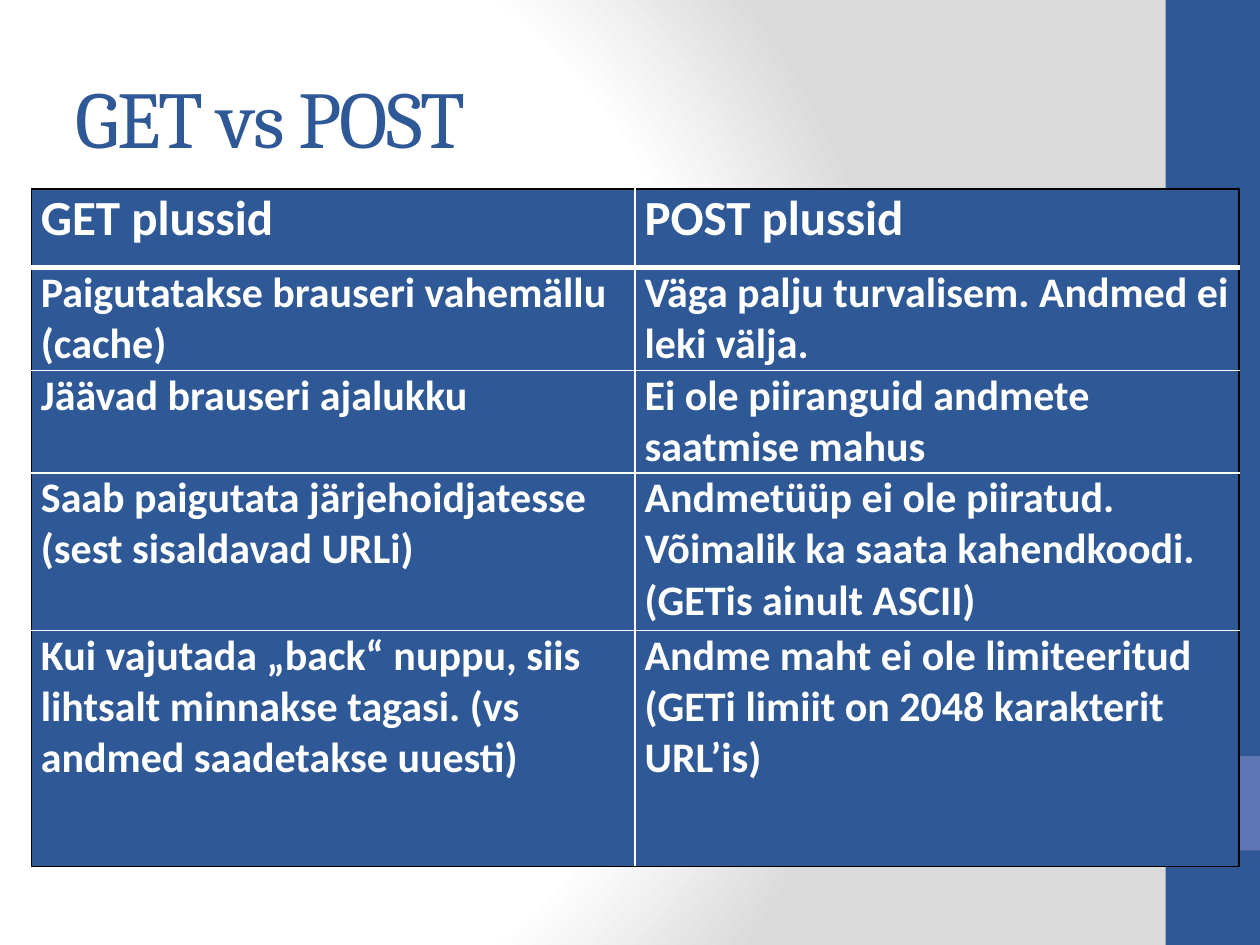
from pptx import Presentation
from pptx.dml.color import RGBColor
from pptx.enum.shapes import MSO_SHAPE
from pptx.enum.text import MSO_ANCHOR, PP_ALIGN
from pptx.oxml import parse_xml
from pptx.oxml.ns import nsdecls, qn
from pptx.util import Pt

COLORS = {
    "navy": "2F5897",
    "periwinkle": "6076B4",
    "white": "FFFFFF",
    "grey": "DADADA",
    "black": "000000",
}
TITLE_FORMAT = {"name": "Cambria", "size": Pt(46), "bold": False}
HEADER_FORMAT = {"name": "Calibri", "size": Pt(28), "bold": True}
ADVANTAGE_FORMAT = {**HEADER_FORMAT, "size": Pt(24)}
CELL_FORMAT = {
    "margin_left": Pt(5.4),
    "margin_right": Pt(5.4),
    "margin_top": 0,
    "margin_bottom": 0,
    "vertical_anchor": MSO_ANCHOR.TOP,
}
ADVANTAGES = [
    ("GET plussid", "POST plussid"),
    ("Paigutatakse brauseri vahemällu (cache)",
     "Väga palju turvalisem. Andmed ei leki välja."),
    ("Jäävad brauseri ajalukku",
     "Ei ole piiranguid andmete saatmise mahus"),
    ("Saab paigutata järjehoidjatesse (sest sisaldavad URLi)",
     "Andmetüüp ei ole piiratud. Võimalik ka saata kahendkoodi. (GETis ainult ASCII)"),
    ("Kui vajutada „back“ nuppu, siis lihtsalt minnakse tagasi. (vs andmed saadetakse uuesti)",
     "Andme maht ei ole limiteeritud (GETi limiit on 2048 karakterit URL’is)"),
]
ROW_SHARES = (1, 1, 1, 2, 3)


def rgb(color):
    """Return the named palette colour."""
    return RGBColor.from_string(COLORS[color])


def apply_format(target, values):
    """Set every attribute in values on target."""
    for attribute, value in values.items():
        setattr(target, attribute, value)


def write(frame, wording, font_format, color):
    """Put one left-aligned formatted run into a text frame."""
    paragraph = frame.paragraphs[0]
    paragraph.alignment = PP_ALIGN.LEFT
    run = paragraph.add_run()
    run.text = wording
    apply_format(run.font, font_format)
    run.font.color.rgb = rgb(color)
    return run


def paint_background(slide):
    """Give the slide its radial white to grey gradient."""
    slide.background.fill.solid()
    properties = slide.element.find(".//" + qn("p:bgPr"))
    stops = "".join(
        f'<a:gs pos="{position * 1000}"><a:srgbClr val="{COLORS[color]}"/></a:gs>'
        for position, color in ((0, "white"), (75, "white"), (100, "grey"))
    )
    gradient = parse_xml(
        f'<a:gradFill {nsdecls("a")} rotWithShape="1"><a:gsLst>{stops}</a:gsLst>'
        '<a:path path="circle"><a:fillToRect l="20000" t="50000" r="100000" b="50000"/>'
        "</a:path></a:gradFill>"
    )
    properties.replace(properties[0], gradient)


def add_sidebar(slide, left, top, width, height):
    """Draw the side band and its square accent."""
    for color, offset, extent in (
        ("navy", 0, height),
        ("periwinkle", height * 0.8, width),
    ):
        band = slide.shapes.add_shape(
            MSO_SHAPE.RECTANGLE, Pt(left), Pt(top + offset), Pt(width), Pt(extent)
        )
        band.shadow.inherit = False
        band.fill.solid()
        band.fill.fore_color.rgb = rgb(color)
        band.line.fill.background()


def add_heading(slide, left, top, width, height):
    """Place and format the title placeholder."""
    heading = slide.shapes.title
    apply_format(heading, {
        "left": Pt(left), "top": Pt(top), "width": Pt(width), "height": Pt(height),
    })
    apply_format(heading.text_frame, {
        "vertical_anchor": MSO_ANCHOR.MIDDLE, "word_wrap": True,
    })
    run = write(heading.text_frame, "GET vs POST", TITLE_FORMAT, "navy")
    run.font._element.set("spc", "-100")


def set_borders(cell, borders):
    """Add the cell's border lines from side, colour and width."""
    properties = cell._tc.get_or_add_tcPr()
    for index, (side, color, width) in enumerate(borders):
        properties.insert(index, parse_xml(
            f'<a:ln{side} {nsdecls("a")} w="{Pt(width)}"><a:solidFill>'
            f'<a:srgbClr val="{COLORS[color]}"/></a:solidFill></a:ln{side}>'
        ))


def add_comparison(slide, left, top, width, height):
    """Build the table of advantages, black outside and white inside."""
    last_row, last_column = len(ADVANTAGES) - 1, len(ADVANTAGES[0]) - 1
    comparison = slide.shapes.add_table(
        last_row + 1, last_column + 1, Pt(left), Pt(top), Pt(width), Pt(height)
    ).table
    for row, share in zip(comparison.rows, ROW_SHARES):
        row.height = Pt(height * share / sum(ROW_SHARES))
    for r, wordings in enumerate(ADVANTAGES):
        font_format = ADVANTAGE_FORMAT if r else HEADER_FORMAT
        for c, wording in enumerate(wordings):
            cell = comparison.cell(r, c)
            apply_format(cell, CELL_FORMAT)
            cell.fill.solid()
            cell.fill.fore_color.rgb = rgb("navy")
            write(cell.text_frame, wording, font_format, "white")
            set_borders(cell, (
                ("L", "white" if c else "black", 1),
                ("R", "black" if c == last_column else "white", 1),
                ("T", "white" if r else "black", 3 if r == 1 else 1),
                ("B", "black" if r == last_row else "white", 1 if r else 3),
            ))


def main():
    """Build and save the slide."""
    deck = Presentation()
    deck.slide_width, deck.slide_height = Pt(720), Pt(540)
    slide = deck.slides.add_slide(deck.slide_layouts[5])
    paint_background(slide)
    add_sidebar(slide, 666, 0, 54, 540)
    add_heading(slide, 36, 21.6, 600, 90)
    add_comparison(slide, 18, 108, 690, 360)
    deck.save("out.pptx")


if __name__ == "__main__":
    main()
